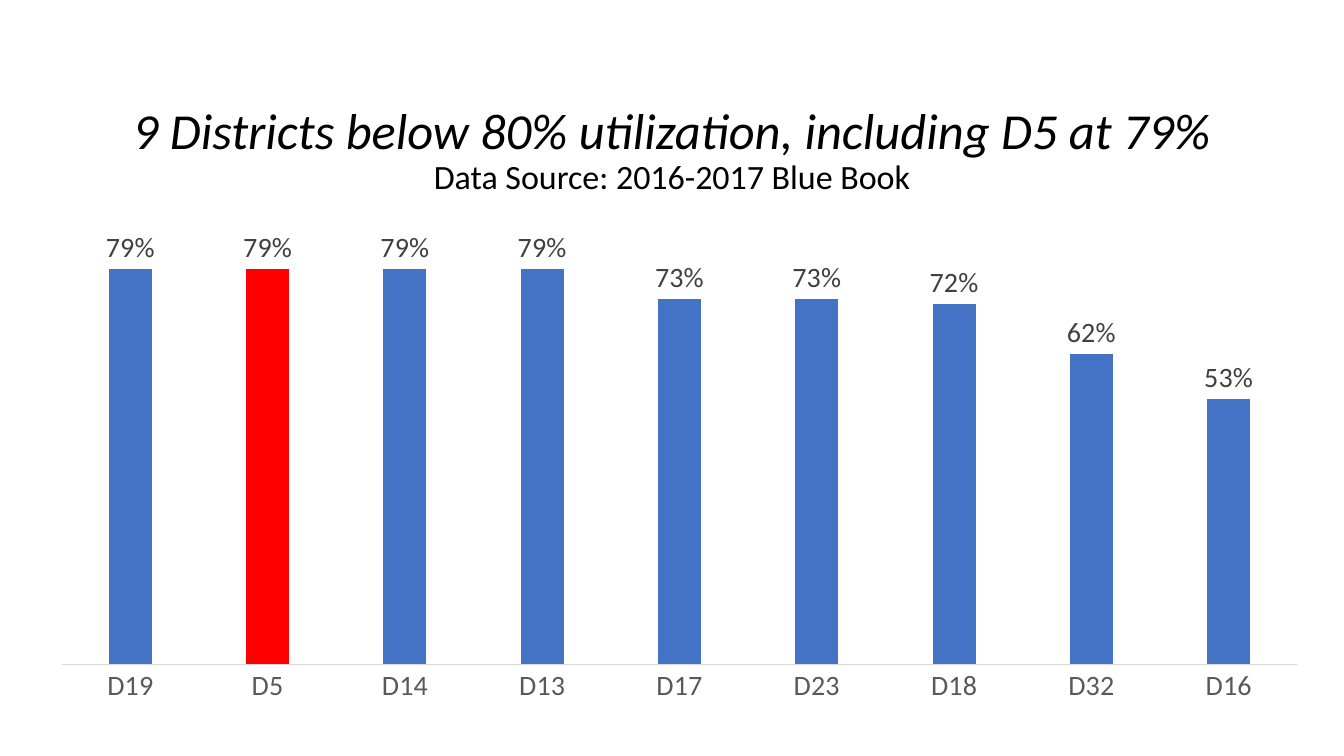
from dataclasses import dataclass

from lxml import etree
from pptx import Presentation
from pptx.chart.data import CategoryChartData
from pptx.dml.color import RGBColor
from pptx.enum.chart import XL_CHART_TYPE, XL_LABEL_POSITION, XL_TICK_MARK
from pptx.enum.text import MSO_ANCHOR, MSO_AUTO_SIZE, PP_ALIGN
from pptx.oxml.ns import qn
from pptx.util import Inches, Pt

COLUMN_CLUSTERED = XL_CHART_TYPE.COLUMN_CLUSTERED
OUTSIDE_END = XL_LABEL_POSITION.OUTSIDE_END
NO_TICK = XL_TICK_MARK.NONE
BOTTOM = MSO_ANCHOR.BOTTOM
NO_AUTOFIT = MSO_AUTO_SIZE.NONE
CENTER = PP_ALIGN.CENTER
TITLE_ONLY = 5

UTILIZATION = {
    "D19": 0.79, "D5": 0.79, "D14": 0.79, "D13": 0.79, "D17": 0.73,
    "D23": 0.73, "D18": 0.72, "D32": 0.62, "D16": 0.53,
}
HIGHLIGHTED_DISTRICT = "D5"


@dataclass(frozen=True)
class Theme:
    font: str = "Calibri"
    text: str = "000000"
    axis_text: str = "595959"
    label_text: str = "404040"
    axis_line: str = "D9D9D9"
    bar: str = "4472C4"
    highlight: str = "FF0000"
    title_size: float = 36
    source_size: float = 24.3
    chart_size: float = 20


def format_font(font, name, size, color, italic=False):
    font.name = name
    font.size = Pt(size)
    font.color.rgb = RGBColor.from_string(color)
    font.bold = False
    font.italic = italic


def fill_solid(element, color):
    element.format.fill.solid()
    element.format.fill.fore_color.rgb = RGBColor.from_string(color)


def place_plot(chart, **shares):
    """Fix the inner plot area at x, y, w, h, given as shares of the chart."""
    plot_area = chart.element.find(".//" + qn("c:plotArea"))
    for old_layout in plot_area.findall(qn("c:layout")):
        plot_area.remove(old_layout)
    layout = etree.Element(qn("c:layout"))
    plot_area.insert(0, layout)
    manual = etree.SubElement(layout, qn("c:manualLayout"))
    settings = {"layoutTarget": "inner", "xMode": "edge", "yMode": "edge", **shares}
    for name, value in settings.items():
        etree.SubElement(manual, qn(f"c:{name}")).set("val", str(value))


class SlideBuilder:
    def __init__(self, presentation, theme):
        self.theme = theme
        self.width = presentation.slide_width
        self.height = presentation.slide_height
        self.slide = presentation.slides.add_slide(
            presentation.slide_layouts[TITLE_ONLY])

    def box(self, left, top, width, height):
        """Turn shares of the slide into lengths."""
        return (int(left * self.width), int(top * self.height),
                int(width * self.width), int(height * self.height))

    def add_text(self, paragraph, text, *, size, italic=False):
        paragraph.alignment = CENTER
        paragraph.line_spacing = 0.9
        paragraph.space_before = Pt(0)
        run = paragraph.add_run()
        run.text = text
        format_font(run.font, self.theme.font, size, self.theme.text, italic)

    def title(self, headline, source, *shares):
        shape = self.slide.shapes.title
        shape.left, shape.top, shape.width, shape.height = self.box(*shares)
        frame = shape.text_frame
        frame.word_wrap = True
        frame.auto_size = NO_AUTOFIT
        frame.vertical_anchor = BOTTOM
        frame.margin_bottom = 0
        self.add_text(frame.paragraphs[0], headline,
                      size=self.theme.title_size, italic=True)
        self.add_text(frame.add_paragraph(), source, size=self.theme.source_size)

    def column_chart(self, values, highlighted, *shares):
        theme = self.theme
        data = CategoryChartData(number_format="0%")
        data.categories = list(values)
        data.add_series("Series 1", list(values.values()))
        chart = self.slide.shapes.add_chart(
            COLUMN_CLUSTERED, *self.box(*shares), data).chart
        chart.has_legend = False
        chart.has_title = False
        format_font(chart.font, theme.font, theme.chart_size, theme.text)
        place_plot(chart, x=0.018, y=0.025, w=0.976, h=0.848)

        plot = chart.plots[0]
        plot.gap_width = 219
        plot.overlap = -27
        plot.vary_by_categories = False
        series = plot.series[0]
        fill_solid(series, theme.bar)
        fill_solid(series.points[list(values).index(highlighted)], theme.highlight)

        labels = series.data_labels
        labels.show_value = True
        labels.position = OUTSIDE_END
        labels.number_format = "0%"
        labels.number_format_is_linked = False
        format_font(labels.font, theme.font, theme.chart_size, theme.label_text)

        value_axis = chart.value_axis
        value_axis.minimum_scale = 0
        value_axis.maximum_scale = 0.9
        value_axis.has_major_gridlines = False
        value_axis.visible = False
        category_axis = chart.category_axis
        category_axis.major_tick_mark = NO_TICK
        category_axis.minor_tick_mark = NO_TICK
        format_font(category_axis.tick_labels.font, theme.font,
                    theme.chart_size, theme.axis_text)
        line = category_axis.format.line
        line.width = Pt(0.75)
        line.color.rgb = RGBColor.from_string(theme.axis_line)


def main():
    presentation = Presentation()
    presentation.slide_width = Inches(13.33)
    presentation.slide_height = Inches(7.5)
    builder = SlideBuilder(presentation, Theme())
    builder.title("9 Districts below 80% utilization, including D5 at 79%",
                  "Data Source: 2016-2017 Blue Book",
                  0.008, 0.068, 0.984, 0.193)
    builder.column_chart(UTILIZATION, HIGHLIGHTED_DISTRICT,
                         0.029, 0.265, 0.942, 0.703)
    presentation.save("out.pptx")


if __name__ == "__main__":
    main()
